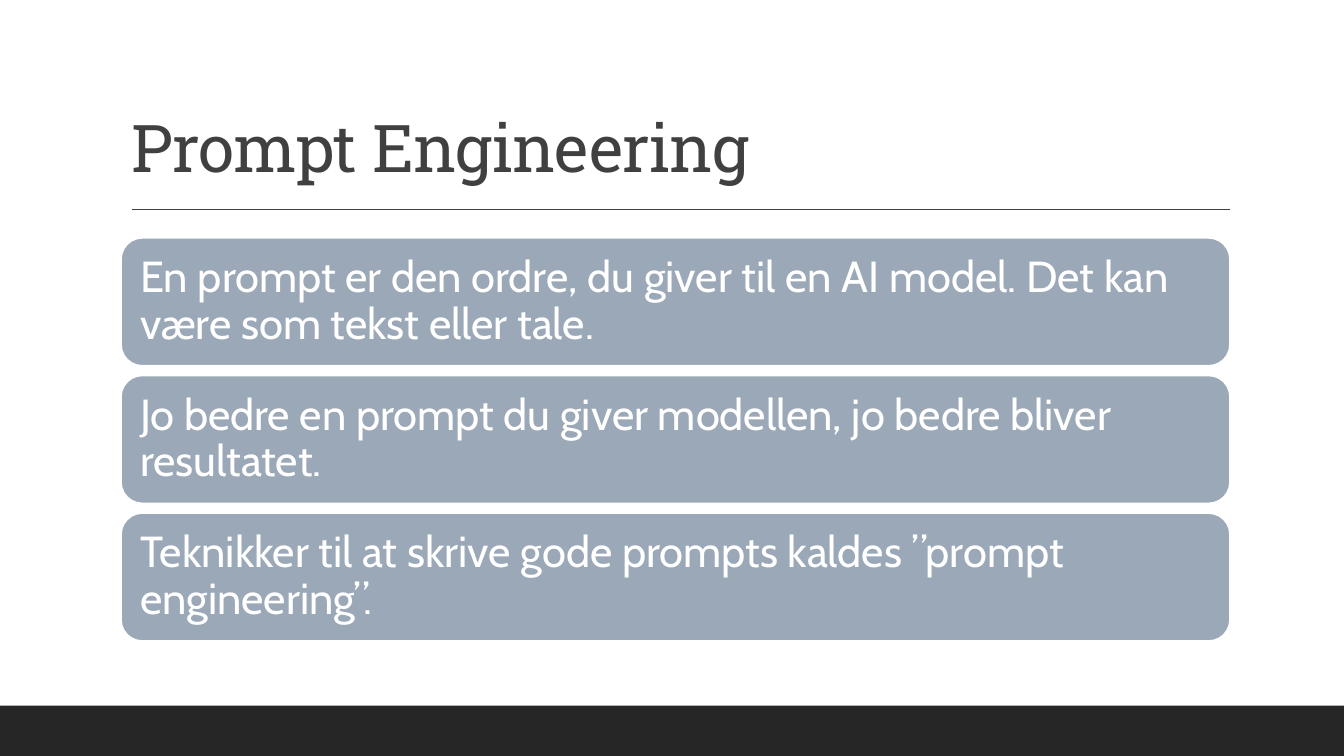
from pptx import Presentation
from pptx.dml.color import RGBColor
from pptx.enum.shapes import MSO_CONNECTOR as Link, MSO_SHAPE as Shape
from pptx.enum.text import MSO_ANCHOR as Anchor, MSO_AUTO_SIZE as Fit, PP_ALIGN as Align
from pptx.oxml.ns import qn
from pptx.util import Inches, Pt
from lxml.etree import SubElement

TITLE = "Prompt Engineering"
CARDS = [
    "En prompt er den ordre, du giver til en AI model. Det kan være som tekst eller tale.",
    "Jo bedre en prompt du giver modellen, jo bedre bliver resultatet.",
    "Teknikker til at skrive gode prompts kaldes ”prompt engineering”.",
]

WHITE = RGBColor(0xFF, 0xFF, 0xFF)
DARK = RGBColor(0x26, 0x26, 0x26)
GRAY = RGBColor(0x40, 0x40, 0x40)
BLUE = RGBColor(0x9B, 0xA8, 0xB7)

HEAD = {"name": "Roboto Slab", "size": Pt(47)}
BODY = {"name": "Cabin", "size": Pt(31)}

WIDE, HIGH = 13.33, 7.5
LEFT, SPAN = 1.2, 11
TOP, TALL, STEP = 2.36, 1.27, 1.365
BAR = HIGH / 15
RULE = 2.08
PAD = 0.13


def box(*sizes):
    return [Inches(size) for size in sizes]


def write(shape, text, style, color, anchor, pad):
    frame = shape.text_frame
    frame.text = text
    look = {"word_wrap": True, "auto_size": Fit.NONE, "vertical_anchor": anchor}
    for side in ("left", "right", "top", "bottom"):
        look["margin_" + side] = Inches(pad[side in ("top", "bottom")])
    for key, value in look.items():
        setattr(frame, key, value)
    para = frame.paragraphs[0]
    para.alignment, para.line_spacing = Align.LEFT, 0.9
    font = para.runs[0].font
    for key, value in style.items():
        setattr(font, key, value)
    font.color.rgb = color
    return para.runs[0]


def block(slide, kind, place, fill):
    shape = slide.shapes.add_shape(kind, *box(*place))
    shape.shadow.inherit = False
    shape.fill.solid()
    shape.fill.fore_color.rgb = fill
    shape.line.fill.background()
    return shape


def main():
    deck = Presentation()
    deck.slide_width, deck.slide_height = box(WIDE, HIGH)
    slide = deck.slides.add_slide(deck.slide_layouts[5])

    block(slide, Shape.RECTANGLE, (0, HIGH - BAR, WIDE, BAR), DARK)

    rule = slide.shapes.add_connector(Link.STRAIGHT, *box(LEFT + 0.11, RULE, LEFT + SPAN, RULE))
    rule.line.color.rgb, rule.line.width = GRAY, Pt(1)
    SubElement(rule._element.spPr, qn("a:effectLst"))

    title = slide.shapes.title
    title.left, title.top, title.width, title.height = box(LEFT, 0.31, SPAN, 1.59)
    run = write(title, TITLE, HEAD, GRAY, Anchor.BOTTOM, (0.1, 0.05))
    run._r.get_or_add_rPr().set("spc", "-50")

    for row, text in enumerate(CARDS):
        card = block(slide, Shape.ROUNDED_RECTANGLE, (LEFT, TOP + row * STEP, SPAN, TALL), BLUE)
        card.line.color.rgb, card.line.width = WHITE, Pt(1.25)
        write(card, text, BODY, WHITE, Anchor.MIDDLE, (PAD, PAD))

    deck.save("out.pptx")


if __name__ == "__main__":
    main()
